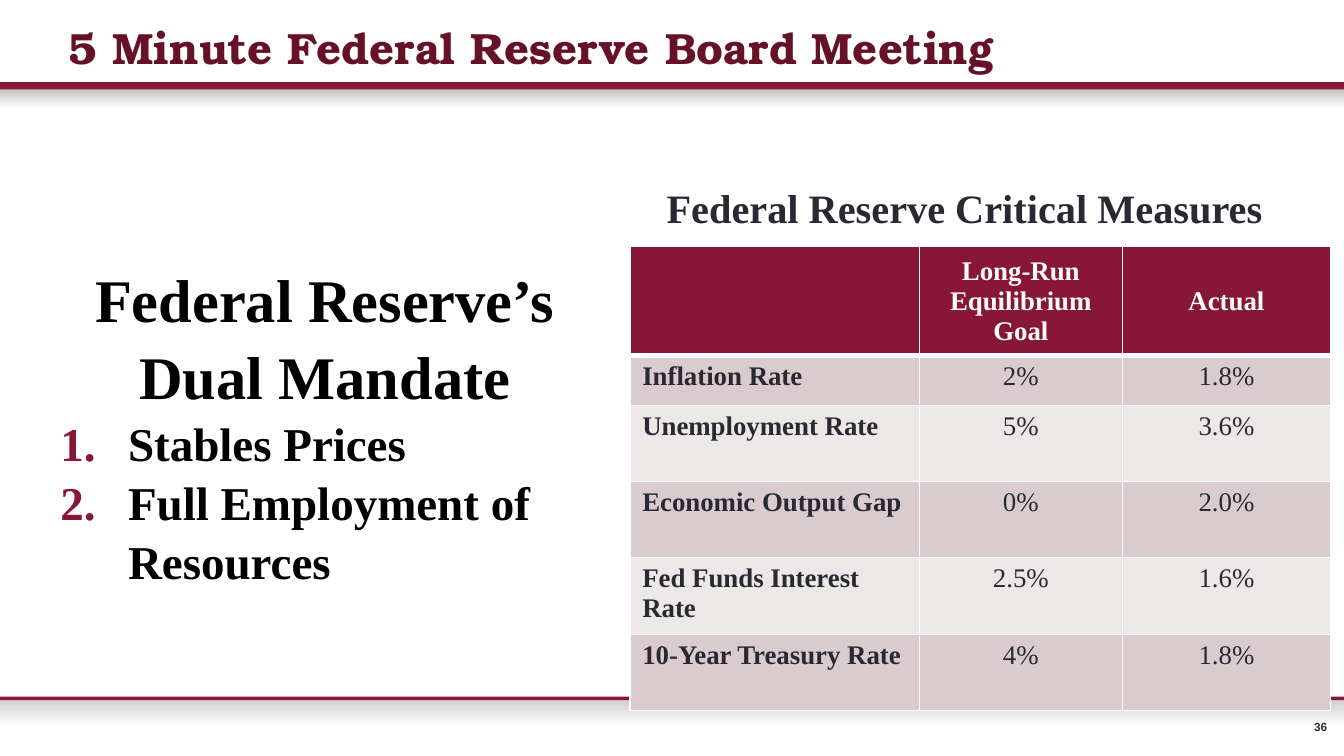
from lxml import etree
from pptx import Presentation
from pptx.dml.color import RGBColor
from pptx.enum.shapes import MSO_SHAPE
from pptx.enum.text import MSO_ANCHOR, MSO_AUTO_SIZE, PP_ALIGN
from pptx.oxml.ns import qn
from pptx.util import Inches, Pt

RECTANGLE = MSO_SHAPE.RECTANGLE
TOP, MIDDLE = MSO_ANCHOR.TOP, MSO_ANCHOR.MIDDLE
LEFT, CENTER, RIGHT = PP_ALIGN.LEFT, PP_ALIGN.CENTER, PP_ALIGN.RIGHT
NO_AUTOFIT = MSO_AUTO_SIZE.NONE

WIDTH, HEIGHT = Inches(11.11), Inches(6.25)
COLUMN, ROW = WIDTH / 100, HEIGHT / 100
MAROON, INK, WHITE, BLACK = "881635", "292934", "FFFFFF", "000000"
BANDS = ("DACCCE", "EDE8E8")
SERIF = "Times New Roman"

HEADINGS = ("", "Long-Run Equilibrium Goal", "Actual")
MEASURES = (
    ("Inflation Rate", "2%", "1.8%"),
    ("Unemployment Rate", "5%", "3.6%"),
    ("Economic Output Gap", "0%", "2.0%"),
    ("Fed Funds Interest Rate", "2.5%", "1.6%"),
    ("10-Year Treasury Rate", "4%", "1.8%"),
)
MEASURE_COLUMNS = (21.51, 15.12, 15.48)
MEASURE_ROWS = (14.4, 6.56) + (10.08,) * 4


def color(value):
    """Turn a hex string into a colour."""
    return RGBColor.from_string(value)


def area(left, top, columns, rows):
    """Turn a place on the hundred-part grid into slide lengths."""
    return (round(left * COLUMN), round(top * ROW),
            round(columns * COLUMN), round(rows * ROW))


def apply(target, values):
    """Set each attribute in a dict of format values."""
    for attribute, value in values.items():
        setattr(target, attribute, value)


def write(paragraph, text, size, ink, align=LEFT, bold=True, font=SERIF, spacing=1.0):
    """Fill and format one paragraph."""
    apply(paragraph, {"alignment": align, "line_spacing": spacing, "space_before": Pt(0)})
    run = paragraph.add_run()
    run.text = text
    apply(run.font, {"name": font, "size": Pt(size), "bold": bold})
    run.font.color.rgb = color(ink)


def add_band(slide, place, stops):
    """Draw a full-width band, plain or fading downwards."""
    band = slide.shapes.add_shape(RECTANGLE, *area(*place))
    band.shadow.inherit = False
    band.line.fill.background()
    if len(stops) == 1:
        band.fill.solid()
        band.fill.fore_color.rgb = color(stops[0])
        return
    band.fill.gradient()
    band.fill.gradient_angle = 270
    for stop, shade in zip(band.fill.gradient_stops, stops):
        stop.color.rgb = color(shade)


def add_label(slide, place, anchor, margin=None):
    """Add a wrapping text box and return its frame."""
    frame = slide.shapes.add_textbox(*area(*place)).text_frame
    apply(frame, {"word_wrap": True, "vertical_anchor": anchor})
    if margin is not None:
        sides = ("margin_left", "margin_top", "margin_right", "margin_bottom")
        apply(frame, dict.fromkeys(sides, margin))
    return frame


def number(paragraph):
    """Give a paragraph a maroon automatic number and a hanging indent."""
    properties = paragraph._p.get_or_add_pPr()
    indent = Inches(0.56)
    properties.set("marL", str(indent))
    properties.set("indent", str(-indent))
    bullet = etree.SubElement(properties, qn("a:buClr"))
    etree.SubElement(bullet, qn("a:srgbClr"), val=MAROON)
    etree.SubElement(properties, qn("a:buFont"), typeface="+mj-lt")
    etree.SubElement(properties, qn("a:buAutoNum"), type="arabicPeriod")


def border(cell, bottom):
    """Draw white cell borders, with the bottom width given in points."""
    properties = cell._tc.get_or_add_tcPr()
    widths = {"a:lnL": 1, "a:lnR": 1, "a:lnT": 1, "a:lnB": bottom}
    for position, (side, width) in enumerate(widths.items()):
        line = etree.Element(qn(side), w=str(Pt(width)))
        fill = etree.SubElement(line, qn("a:solidFill"))
        etree.SubElement(fill, qn("a:srgbClr"), val=WHITE)
        properties.insert(position, line)


def add_title(slide, text):
    """Place and format the title."""
    title = slide.shapes.title
    apply(title, dict(zip(("left", "top", "width", "height"), area(4.23, 1.92, 90, 8.64))))
    apply(title.text_frame, {"vertical_anchor": MIDDLE, "word_wrap": True,
                             "auto_size": NO_AUTOFIT})
    write(title.text_frame.paragraphs[0], text, 26, "661128", font="TeX Gyre Bonum")


def add_mandate(slide):
    """Add the dual mandate heading and its numbered goals."""
    frame = add_label(slide, (3.6, 33.44, 41.13, 47.68), TOP)
    write(frame.paragraphs[0], "Federal Reserve’s", 36, BLACK, CENTER, spacing=1.05)
    write(frame.add_paragraph(), "Dual Mandate", 36, BLACK, CENTER, spacing=1.05)
    for goal in ("Stables Prices", "Full Employment of Resources"):
        paragraph = frame.add_paragraph()
        write(paragraph, goal, 28, BLACK, spacing=1.05)
        number(paragraph)


def add_measures(slide):
    """Add the table of goals and actual values."""
    place = area(46.89, 32.64, sum(MEASURE_COLUMNS), sum(MEASURE_ROWS))
    table = slide.shapes.add_table(len(MEASURE_ROWS), len(MEASURE_COLUMNS), *place).table
    for column, share in zip(table.columns, MEASURE_COLUMNS):
        column.width = round(share * COLUMN)
    for row, share in zip(table.rows, MEASURE_ROWS):
        row.height = round(share * ROW)
    for r, entries in enumerate((HEADINGS,) + MEASURES):
        heading = r == 0
        for c, entry in enumerate(entries):
            cell = table.cell(r, c)
            cell.vertical_anchor = MIDDLE if heading else TOP
            cell.fill.solid()
            cell.fill.fore_color.rgb = color(MAROON if heading else BANDS[(r - 1) % 2])
            border(cell, 3 if heading else 1)
            if entry:
                write(cell.text_frame.paragraphs[0], entry, 16, WHITE if heading else INK,
                      CENTER if heading or c else LEFT, heading or c == 0)


def main():
    """Build and save the slide."""
    deck = Presentation()
    apply(deck, {"slide_width": WIDTH, "slide_height": HEIGHT})
    slide = deck.slides.add_slide(deck.slide_layouts.get_by_name("Title Only"))
    add_band(slide, (0, 92.48, 100, 3.68), ("CFCFCF", WHITE))
    add_band(slide, (0, 11.76, 100, 2.56), ("C0C0C0", WHITE))
    add_band(slide, (0, 92.16, 100, 0.48), (MAROON,))
    add_band(slide, (0, 10.88, 100, 0.96), (MAROON,))
    page = add_label(slide, (96.74, 95.2, 2, 1.92), MIDDLE, 0)
    write(page.paragraphs[0], "36", 7, INK, RIGHT, font="Arial")
    add_title(slide, "5 Minute Federal Reserve Board Meeting")
    caption = add_label(slide, (47.25, 24, 49.05, 7.52), MIDDLE)
    write(caption.paragraphs[0], "Federal Reserve Critical Measures", 24, INK, CENTER,
          spacing=0.95)
    add_mandate(slide)
    add_measures(slide)
    deck.save("out.pptx")


if __name__ == "__main__":
    main()
